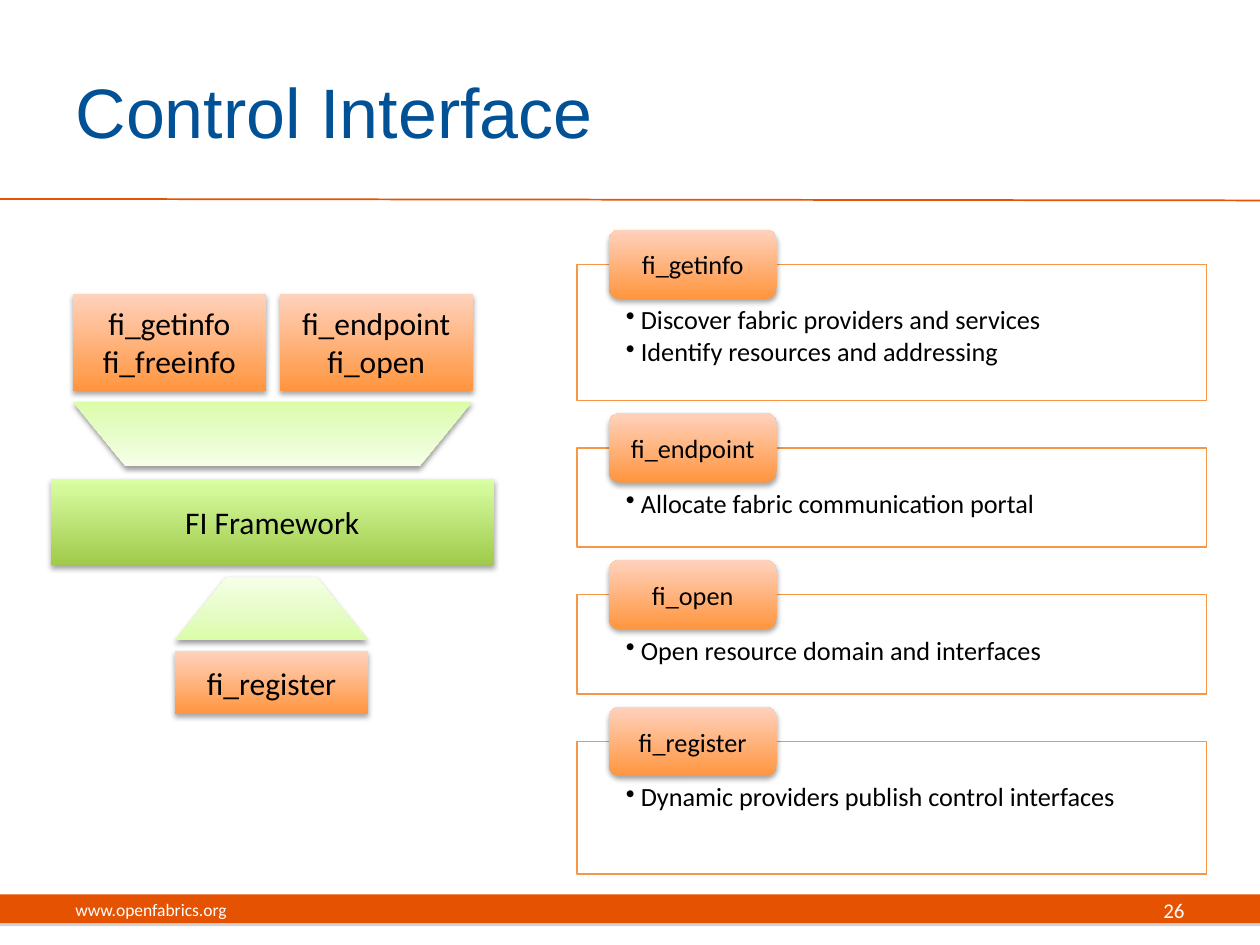
from lxml import etree
from pptx import Presentation
from pptx import util as u
from pptx.dml.color import RGBColor
from pptx.enum import shapes, text
from pptx.oxml.ns import qn

ORANGE = [(0, "FF953E"), (100, "FFD2BD")]
GREEN = [(0, "A0CA4A"), (100, "DAFFA5")]
PALE_GREEN = [(0, "DAFDA7"), (35, "E4FCC2"), (100, "F5FFE7")]
BRAND, BLUE, CARD_LINE = "E55302", "005195", "F79646"
BLACK, WHITE, GREY = "000000", "FFFFFF", "808080"
Preset = shapes.MSO_SHAPE
Align = text.PP_ALIGN


def rgb(value):
    return RGBColor.from_string(value)


def add(parent, tag, **attributes):
    return etree.SubElement(parent, qn(tag), attributes)


class Deck:
    def __init__(self, font="Calibri"):
        self.font = font
        self.prs = Presentation()
        self.prs.slide_width, self.prs.slide_height = u.Cm(25.4), u.Cm(19.05)
        self.slide = self.prs.slides.add_slide(self.prs.slide_layouts[5])

    def format(self, paragraph, size, color=BLACK, align=Align.LEFT, font=None):
        paragraph.alignment = align
        paragraph.font.name = font or self.font
        paragraph.font.size = u.Pt(size)
        paragraph.font.color.rgb = rgb(color)

    def title(self, words, *box):
        title = self.slide.shapes.title
        title.left, title.top, title.width, title.height = map(u.Cm, box)
        title.text_frame.text = words
        title.text_frame.vertical_anchor = text.MSO_ANCHOR.MIDDLE
        self.format(title.text_frame.paragraphs[0], 40, BLUE, font="Arial")

    def shape(self, preset, box, fill, line=None):
        """Draw a preset shape; fill is a colour or a list of gradient stops."""
        shape = self.slide.shapes.add_shape(preset, *map(u.Cm, box))
        shape.shadow.inherit = False
        if isinstance(fill, str):
            shape.fill.solid()
            shape.fill.fore_color.rgb = rgb(fill)
        else:
            shape.fill.gradient()
            shape.fill.gradient_angle = 90
            stops = shape._element.spPr.find(".//" + qn("a:gsLst"))
            for stop in list(stops):
                stops.remove(stop)
            for position, color in fill:
                stop = add(stops, "a:gs", pos=str(position * 1000))
                add(stop, "a:srgbClr", val=color)
        if line:
            shape.line.color.rgb = rgb(line)
            shape.line.width = u.Pt(0.75)
        else:
            shape.line.fill.background()
        return shape

    def shadow(self, shape, color=BLACK, blur=3.1, distance=1.8, opacity=35):
        effects = shape._element.spPr.find(qn("a:effectLst"))
        outer = add(effects, "a:outerShdw", blurRad=str(u.Pt(blur)),
                    dist=str(u.Pt(distance)), dir="5400000", rotWithShape="0")
        add(add(outer, "a:srgbClr", val=color), "a:alpha", val=str(opacity * 1000))

    def block(self, words, box, fill, size=18, preset=Preset.RECTANGLE):
        block = self.shape(preset, box, fill)
        self.shadow(block)
        frame = block.text_frame
        frame.word_wrap = True
        frame.vertical_anchor = text.MSO_ANCHOR.MIDDLE
        paragraph = frame.paragraphs[0]
        paragraph.text = words
        self.format(paragraph, size, align=Align.CENTER)

    def funnel(self, box, flipped=False):
        funnel = self.shape(Preset.TRAPEZOID, box, PALE_GREEN)
        funnel.adjustments[0] = 0.82
        self.shadow(funnel, distance=1.6, opacity=38)
        if flipped:
            funnel._element.spPr.find(qn("a:xfrm")).set("flipV", "1")

    def card(self, name, points, top, height):
        """Draw a bulleted card with a name chip centred on its top edge."""
        left, chip_height = 11.63, 1.4
        card = self.shape(Preset.RECTANGLE, (left, top, 12.7, height), WHITE, CARD_LINE)
        frame = card.text_frame
        frame.word_wrap = True
        frame.vertical_anchor = text.MSO_ANCHOR.TOP
        frame.margin_left = frame.margin_right = u.Cm(0.99)
        frame.margin_top, frame.margin_bottom = u.Cm(0.86), u.Cm(0.3)
        frame.text = "\n".join(points)
        for point in frame.paragraphs:
            properties = point._p.get_or_add_pPr()
            properties.set("marL", str(u.Cm(0.3)))
            properties.set("indent", str(u.Cm(-0.3)))
            add(properties, "a:buChar", char="•")
            point.line_spacing = 0.9
            point.space_after = u.Pt(2.25)
            self.format(point, 15)
        self.block(name, (left + 0.64, top - chip_height / 2, 3.39, chip_height),
                   ORANGE, 15, Preset.ROUNDED_RECTANGLE)

    def rule(self, x1, y1, x2, y2):
        rule = self.slide.shapes.add_connector(
            shapes.MSO_CONNECTOR.STRAIGHT, *map(u.Cm, (x1, y1, x2, y2)))
        rule.line.color.rgb = rgb(BRAND)
        rule.line.width = u.Pt(1)
        add(rule._element.spPr, "a:effectLst")

    def label(self, words, box, size, align):
        frame = self.slide.shapes.add_textbox(*map(u.Cm, box)).text_frame
        frame.word_wrap = True
        frame.vertical_anchor = text.MSO_ANCHOR.MIDDLE
        frame.text = words
        self.format(frame.paragraphs[0], size, WHITE, align)


def main():
    deck = Deck()

    # Title and rule
    deck.title("Control Interface", 1.27, 0.64, 20.75, 3.18)
    deck.rule(0, 4.01, 25.4, 4.04)

    # Footer
    bar = deck.shape(Preset.RECTANGLE, (0, 18.03, 25.4, 0.58), BRAND)
    deck.shadow(bar, GREY, blur=0)
    deck.label("www.openfabrics.org", (1.27, 17.83, 8.04, 1.02), 10, Align.LEFT)
    deck.label("26", (18.21, 17.83, 5.92, 1.02), 12, Align.RIGHT)

    # Function cards
    cards = [
        ("fi_getinfo", ["Discover fabric providers and services",
                        "Identify resources and addressing"], 2.74),
        ("fi_endpoint", ["Allocate fabric communication portal"], 2),
        ("fi_open", ["Open resource domain and interfaces"], 2),
        ("fi_register", ["Dynamic providers publish control interfaces"], 2.67),
    ]
    top, gap = 5.33, 0.96
    for name, points, height in cards:
        deck.card(name, points, top, height)
        top += height + gap

    # Framework diagram
    width = 3.89
    deck.block("FI Framework", (1.02, 9.65, 8.94, 1.75), GREEN)
    deck.funnel((1.47, 8.1, 8.05, 1.3), flipped=True)
    deck.funnel((3.53, 11.63, width, 1.27))
    deck.block("fi_getinfo\nfi_freeinfo", (1.47, 5.92, width, 1.96), ORANGE)
    deck.block("fi_endpoint\nfi_open", (5.64, 5.92, width, 1.96), ORANGE)
    deck.block("fi_register", (3.53, 13.13, width, 1.27), ORANGE)

    deck.prs.save("out.pptx")


if __name__ == "__main__":
    main()
